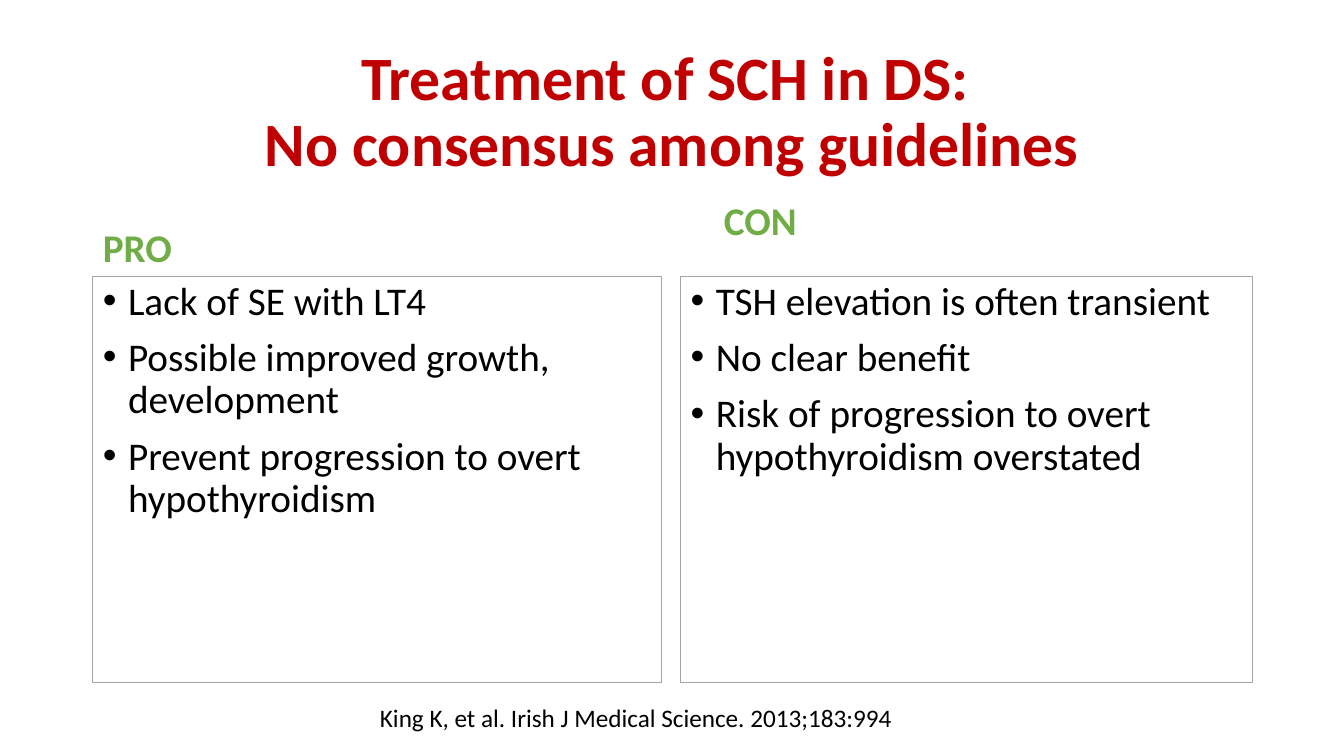
"""Builds the slide on arguments for and against treating SCH in DS."""
from pptx import Presentation
from pptx.dml.color import RGBColor
from pptx.enum.text import MSO_ANCHOR, MSO_AUTO_SIZE, PP_ALIGN
from pptx.util import Inches, Pt

TOP, MIDDLE, BOTTOM = MSO_ANCHOR.TOP, MSO_ANCHOR.MIDDLE, MSO_ANCHOR.BOTTOM
CENTER = PP_ALIGN.CENTER
NO_FIT = MSO_AUTO_SIZE.NONE

WIDTH, HEIGHT = 13.33, 7.5
LEFT, PANEL_TOP, PANEL_HEIGHT = 0.92, 2.74, 4.03
RED, GREEN, GREY, BLACK = "C00000", "70AD47", "A5A5A5", "000000"

TITLE = "Treatment of SCH in DS: \vNo consensus among guidelines"
SIDES = [
    {"heading": "PRO",
     "heading_box": (LEFT, 1.84, 5.64, 0.9),
     "panel": (LEFT, PANEL_TOP, 5.64, PANEL_HEIGHT),
     "points": ["Lack of SE with LT4",
                "Possible improved growth, development",
                "Prevent progression to overt hypothyroidism"]},
    {"heading": "CON",
     "heading_box": (7.08, 1.64, 4.08, 0.83),
     "panel": (6.75, PANEL_TOP, 5.67, PANEL_HEIGHT),
     "points": ["TSH elevation is often transient",
                "No clear benefit",
                "Risk of progression to overt hypothyroidism overstated"]},
]
CITATION = "King K, et al. Irish J Medical Science. 2013;183:994"


def color(value):
    return RGBColor.from_string(value)


def fill_text(sp, box, lines, size, ink, bold=False, anchor=TOP, align=None,
              spacing=0.9, bulleted=False):
    sp.left, sp.top, sp.width, sp.height = map(Inches, box)
    tf = sp.text_frame
    tf.text = "\n".join(lines)
    tf.word_wrap = True
    tf.auto_size = NO_FIT
    tf.vertical_anchor = anchor
    for i, p in enumerate(tf.paragraphs):
        p.alignment = align
        p.line_spacing = spacing
        p.space_before = Pt(10 if i else 0)
        if bulleted:
            pPr = p._p.get_or_add_pPr()
            pPr.set("marL", str(Inches(0.25)))
            pPr.set("indent", str(Inches(-0.25)))
        p.font.name = "Calibri"
        p.font.size = Pt(size)
        p.font.bold = bold
        p.font.color.rgb = color(ink)


def main():
    prs = Presentation()
    prs.slide_width, prs.slide_height = Inches(WIDTH), Inches(HEIGHT)
    s = prs.slides.add_slide(prs.slide_layouts.get_by_name("Comparison"))
    title, *bodies = s.placeholders
    fill_text(title, (LEFT, 0.4, 11.5, 1.45), [TITLE], 44, RED,
              bold=True, anchor=MIDDLE, align=CENTER)

    for side, heading, panel in zip(SIDES, bodies[::2], bodies[1::2]):
        fill_text(heading, side["heading_box"], [side["heading"]], 28, GREEN,
                  bold=True, anchor=BOTTOM)
        fill_text(panel, side["panel"], side["points"], 28, BLACK, bulleted=True)
        panel.line.color.rgb = color(GREY)
        panel.line.width = Pt(0.75)

    citation = s.shapes.add_textbox(0, 0, 0, 0)
    fill_text(citation, (3.67, 6.92, 8.5, 0.4), [CITATION], 18, BLACK, spacing=1.0)
    prs.save("out.pptx")


if __name__ == "__main__":
    main()
